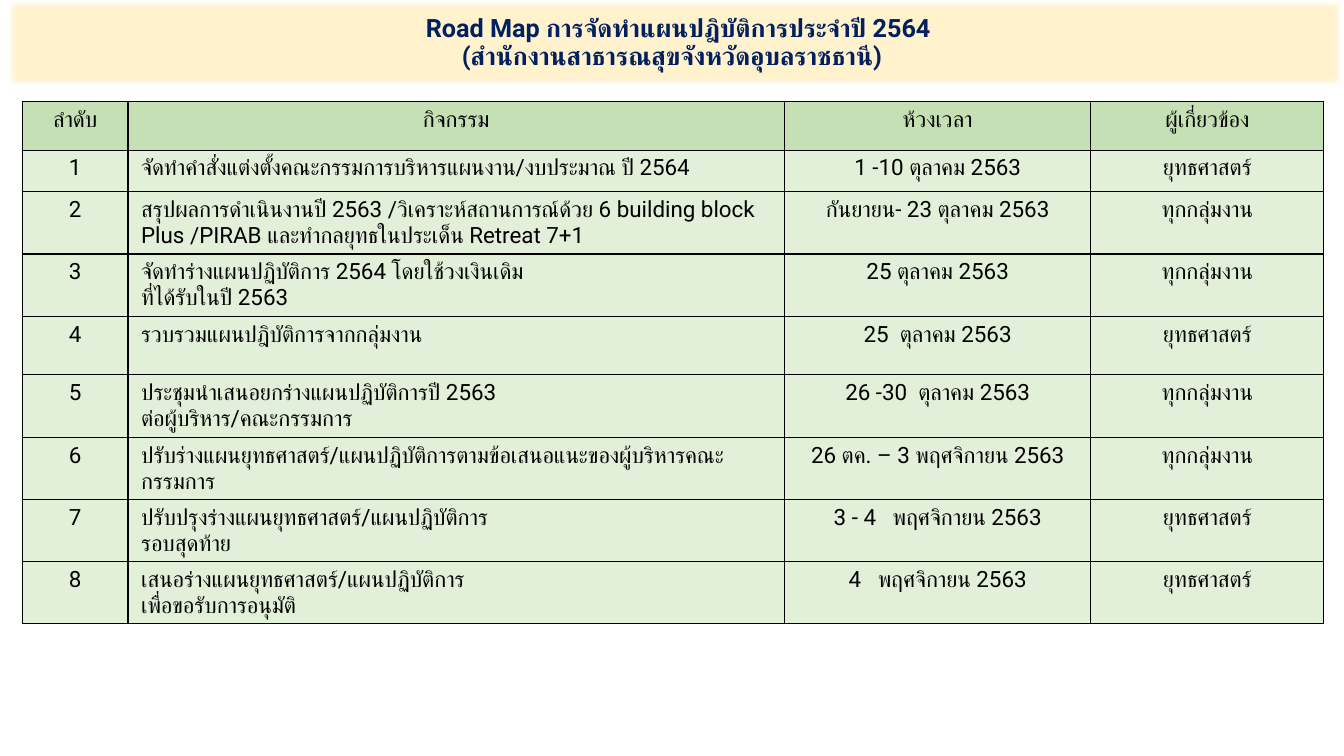
from copy import deepcopy

from lxml import etree
from pptx import Presentation
from pptx.dml.color import RGBColor
from pptx.enum.text import MSO_ANCHOR, MSO_AUTO_SIZE, PP_ALIGN
from pptx.oxml.ns import qn
from pptx.util import Inches, Pt

LEFT, CENTER = PP_ALIGN.LEFT, PP_ALIGN.CENTER
MIDDLE = MSO_ANCHOR.MIDDLE
NO_AUTOFIT = MSO_AUTO_SIZE.NONE

FONT = "Roboto"
BLACK, NAVY, CREAM = "000000", "002060", "FFF2CC"
HEADER_GREEN, BODY_GREEN = "C5E0B4", "E2F0D9"

TITLE = (" Road Map การจัดทำแผนปฎิบัติการประจำปี 2564\n"
         "(สำนักงานสาธารณสุขจังหวัดอุบลราชธานี) ")
STRATEGY, ALL_GROUPS = "ยุทธศาสตร์", "ทุกกลุ่มงาน"
HEADINGS = ("ลำดับ", "กิจกรรม", "ห้วงเวลา", "ผู้เกี่ยวข้อง")
ACTIVITIES = [
    ("จัดทำคำสั่งแต่งตั้งคณะกรรมการบริหารแผนงาน/งบประมาณ ปี 2564",
     "1 -10 ตุลาคม 2563", STRATEGY),
    ("สรุปผลการดำเนินงานปี 2563 /วิเคราะห์สถานการณ์ด้วย 6 building block "
     "Plus /PIRAB และทำกลยุทธในประเด็น Retreat 7+1",
     "กันยายน- 23 ตุลาคม 2563", ALL_GROUPS),
    ("จัดทำร่างแผนปฏิบัติการ 2564 โดยใช้วงเงินเดิม\nที่ได้รับในปี 2563",
     "25 ตุลาคม 2563", ALL_GROUPS),
    ("รวบรวมแผนปฎิบัติการจากกลุ่มงาน", "25  ตุลาคม 2563", STRATEGY),
    ("ประชุมนำเสนอยกร่างแผนปฏิบัติการปี 2563 \nต่อผู้บริหาร/คณะกรรมการ",
     "26 -30  ตุลาคม 2563", ALL_GROUPS),
    ("ปรับร่างแผนยุทธศาสตร์/แผนปฏิบัติการตามข้อเสนอแนะของผู้บริหารคณะกรรมการ",
     "26 ตค. – 3 พฤศจิกายน 2563", ALL_GROUPS),
    ("ปรับปรุงร่างแผนยุทธศาสตร์/แผนปฏิบัติการ\nรอบสุดท้าย",
     "3 - 4   พฤศจิกายน 2563", STRATEGY),
    ("เสนอร่างแผนยุทธศาสตร์/แผนปฏิบัติการ \nเพื่อขอรับการอนุมัติ",
     "4   พฤศจิกายน 2563", STRATEGY),
]
COLUMN_WIDTHS = (1.05, 6.51, 3.04, 2.31)
ROW_HEIGHTS = (0.48, 0.41, 0.62, 0.62, 0.58, 0.62, 0.58, 0.58, 0.58)


def rgb(color):
    """Return the colour for a hex string."""
    return RGBColor.from_string(color)


def write_text(frame, text, size=16, color=BLACK, bold=False, align=LEFT,
               line_spacing=None):
    """Write one formatted paragraph into a text frame."""
    paragraph = frame.paragraphs[0]
    paragraph.text = text
    paragraph.alignment = align
    paragraph.line_spacing = line_spacing
    for run in paragraph.runs:
        run.font.size = Pt(size)
        run.font.bold = bold
        run.font.name = FONT
        run.font.color.rgb = rgb(color)
        properties = run.font._element
        etree.SubElement(properties, qn("a:cs"), typeface=FONT)
    for line_break in paragraph._p.findall(qn("a:br")):
        line_break.insert(0, deepcopy(properties))


def add_banner(slide):
    """Format the title placeholder as a soft-edged banner."""
    banner = slide.shapes.title
    banner.left, banner.top = Inches(0.1), Inches(0.03)
    banner.width, banner.height = Inches(13.19), Inches(0.8)
    banner.fill.solid()
    banner.fill.fore_color.rgb = rgb(CREAM)
    banner.shadow.inherit = False
    effects = banner._element.spPr.find(qn("a:effectLst"))
    etree.SubElement(effects, qn("a:softEdge"), rad=str(Pt(2.5)))
    frame = banner.text_frame
    frame.word_wrap = True
    frame.auto_size = NO_AUTOFIT
    frame.vertical_anchor = MIDDLE
    write_text(frame, TITLE, size=18, color=NAVY, bold=True, align=CENTER,
               line_spacing=0.9)


def add_borders(cell):
    """Draw a thin black line on all four sides of a cell."""
    properties = cell._tc.get_or_add_tcPr()
    for side in ("lnL", "lnR", "lnT", "lnB"):
        border = etree.SubElement(properties, qn(f"a:{side}"), w=str(Pt(1)))
        fill = etree.SubElement(border, qn("a:solidFill"))
        etree.SubElement(fill, qn("a:srgbClr"), val=BLACK)


def fill_cell(cell, text, color, align):
    """Give a cell its margins, borders, fill and text."""
    cell.margin_left = cell.margin_right = Inches(0.13)
    cell.margin_top = cell.margin_bottom = Inches(0.05)
    add_borders(cell)
    cell.fill.solid()
    cell.fill.fore_color.rgb = rgb(color)
    write_text(cell.text_frame, text, align=align)


def add_road_map(slide):
    """Add the table of numbered activities."""
    rows = [HEADINGS] + [(str(number), *activity)
                         for number, activity in enumerate(ACTIVITIES, 1)]
    road_map = slide.shapes.add_table(
        len(rows), len(HEADINGS), Inches(0.22), Inches(1.01),
        Inches(sum(COLUMN_WIDTHS)), Inches(sum(ROW_HEIGHTS))).table
    for column, width in zip(road_map.columns, COLUMN_WIDTHS):
        column.width = Inches(width)
    for row, height in zip(road_map.rows, ROW_HEIGHTS):
        row.height = Inches(height)
    for row_index, row in enumerate(rows):
        color = BODY_GREEN if row_index else HEADER_GREEN
        for column_index, text in enumerate(row):
            align = LEFT if row_index and column_index == 1 else CENTER
            fill_cell(road_map.cell(row_index, column_index), text, color, align)


def main():
    """Build the road map slide and save it."""
    presentation = Presentation()
    presentation.slide_width = Inches(13.33)
    presentation.slide_height = Inches(7.5)
    slide = presentation.slides.add_slide(presentation.slide_layouts[5])
    add_banner(slide)
    add_road_map(slide)
    presentation.save("out.pptx")


if __name__ == "__main__":
    main()
